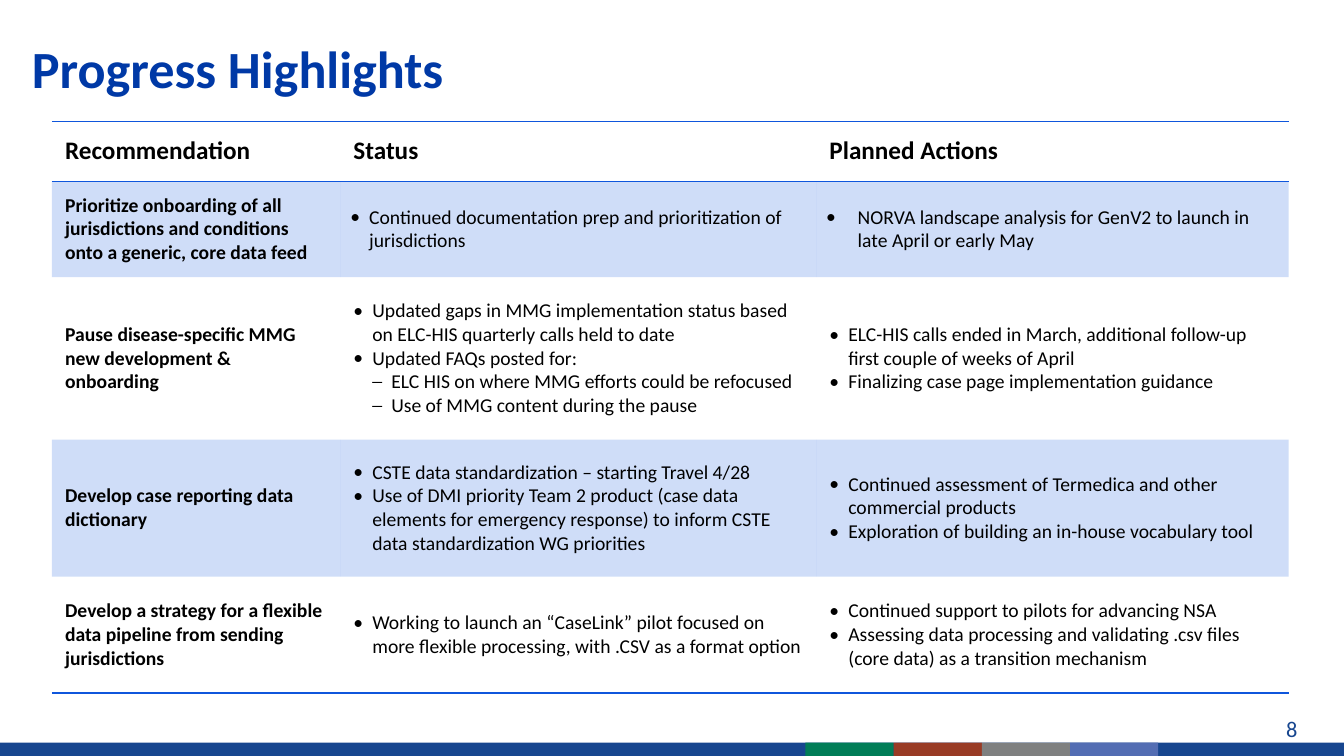
from lxml.etree import SubElement
from pptx import Presentation
from pptx.dml.color import RGBColor
from pptx.enum.shapes import MSO_SHAPE
from pptx.enum.text import MSO_ANCHOR, MSO_AUTO_SIZE, PP_ALIGN
from pptx.oxml.ns import qn
from pptx.util import Pt

TITLE_BLUE = RGBColor(0x00, 0x39, 0xA6)
TABLE_BLUE = RGBColor(0x0F, 0x56, 0xDC)
NAVY = RGBColor(0x17, 0x46, 0x8F)
GREEN = RGBColor(0x00, 0x7D, 0x57)
RED = RGBColor(0x99, 0x3B, 0x25)
GRAY = RGBColor(0x7F, 0x80, 0x80)
PERIWINKLE = RGBColor(0x53, 0x6D, 0xB3)
BLACK = RGBColor(0, 0, 0)

NO_STYLE = "{2D5ABB26-0587-4C30-8999-92F81FD0307C}"
COLUMN_WIDTHS = [206, 340, 337.5]
ROW_HEIGHTS = [43, 68.5, 116, 98, 83]
BULLET, DASH = "•", "─"
INDENT = 13.5

ROWS = [
    [[("", "Recommendation")], [("", "Status")], [("", "Planned Actions")]],
    [
        [("", "Prioritize onboarding of all jurisdictions and conditions onto a generic, core data feed")],
        [(BULLET, "Continued documentation prep and prioritization of jurisdictions")],
        [(BULLET, "NORVA landscape analysis for GenV2 to launch in late April or early May")],
    ],
    [
        [("", "Pause disease-specific MMG new development & onboarding")],
        [
            (BULLET, "Updated gaps in MMG implementation status based on ELC-HIS quarterly calls held to date"),
            (BULLET, "Updated FAQs posted for:"),
            (DASH, "ELC HIS on where MMG efforts could be refocused"),
            (DASH, "Use of MMG content during the pause"),
        ],
        [
            (BULLET, "ELC-HIS calls ended in March, additional follow-up first couple of weeks of April"),
            (BULLET, "Finalizing case page implementation guidance"),
        ],
    ],
    [
        [("", "Develop case reporting data dictionary")],
        [
            (BULLET, "CSTE data standardization – starting Travel 4/28"),
            (BULLET, "Use of DMI priority Team 2 product (case data elements for emergency response) "
                     "to inform CSTE data standardization WG priorities"),
        ],
        [
            (BULLET, "Continued assessment of Termedica and other commercial products"),
            (BULLET, "Exploration of building an in-house vocabulary tool"),
        ],
    ],
    [
        [("", "Develop a strategy for a flexible data pipeline from sending jurisdictions")],
        [(BULLET, "Working to launch an “CaseLink” pilot focused on more flexible processing, "
                  "with .CSV as a format option")],
        [
            (BULLET, "Continued support to pilots for advancing NSA"),
            (BULLET, "Assessing data processing and validating .csv files (core data) as a transition mechanism"),
        ],
    ],
]


def apply_format(target, values):
    for name, value in values.items():
        setattr(target, name, value)


def add_span(para, text, size, color, bold):
    span = para.add_run()
    span.text = text
    apply_format(span.font, {"name": "Calibri", "size": Pt(size), "bold": bold})
    span.font.color.rgb = color


deck = Presentation()
apply_format(deck, {"slide_width": Pt(960), "slide_height": Pt(540)})
page = deck.slides.add_slide(deck.slide_layouts[5])

footer_bars = [(0, 960, NAVY)]
for index, color in enumerate([GREEN, RED, GRAY, PERIWINKLE]):
    footer_bars.append((575.3 + 63 * index, 63, color))
for left, width, color in footer_bars:
    bar = page.shapes.add_shape(MSO_SHAPE.RECTANGLE, Pt(left), Pt(530.5), Pt(width), Pt(9.5))
    bar.shadow.inherit = False
    bar.fill.solid()
    bar.fill.fore_color.rgb = color
    bar.line.fill.background()

title = page.shapes.title
apply_format(title, {"left": Pt(15.5), "top": Pt(21.5), "width": Pt(896), "height": Pt(52.5)})
apply_format(title.text_frame, {
    "vertical_anchor": MSO_ANCHOR.BOTTOM, "word_wrap": True, "auto_size": MSO_AUTO_SIZE.NONE,
})
title_para = title.text_frame.paragraphs[0]
apply_format(title_para, {"alignment": PP_ALIGN.LEFT, "line_spacing": Pt(40)})
add_span(title_para, "Progress Highlights", 37.3, TITLE_BLUE, True)

frame = page.shapes.add_table(
    len(ROWS), len(COLUMN_WIDTHS), Pt(37), Pt(86.5), Pt(sum(COLUMN_WIDTHS)), Pt(sum(ROW_HEIGHTS)))
table = frame.table
apply_format(table, {"first_row": False, "horz_banding": False})
table._tbl.tblPr.find(qn("a:tableStyleId")).text = NO_STYLE
for column, width in zip(table.columns, COLUMN_WIDTHS):
    column.width = Pt(width)
for row, height in zip(table.rows, ROW_HEIGHTS):
    row.height = Pt(height)

for row_index, row in enumerate(ROWS):
    borders = {0: ["a:lnT", "a:lnB"], len(ROWS) - 1: ["a:lnB"]}.get(row_index, [])
    for column_index, lines in enumerate(row):
        cell = table.cell(row_index, column_index)
        tight = row_index == 1 and column_index > 0
        side, edge = (7.2, 0) if tight else (9.5, 4.8)
        apply_format(cell, {
            "margin_left": Pt(side), "margin_right": Pt(side),
            "margin_top": Pt(edge), "margin_bottom": Pt(edge),
            "vertical_anchor": MSO_ANCHOR.MIDDLE,
        })
        properties = cell._tc.get_or_add_tcPr()
        for side_tag in borders:
            border = SubElement(properties, qn(side_tag), w=str(Pt(1)))
            paint = SubElement(border, qn("a:solidFill"))
            SubElement(paint, qn("a:srgbClr"), val=str(TABLE_BLUE))
        if row_index % 2:
            cell.fill.solid()
            cell.fill.fore_color.rgb = TABLE_BLUE
            SubElement(next(properties.iter(qn("a:srgbClr"))), qn("a:alpha"), val="20000")
        else:
            cell.fill.background()

        for line_index, (marker, text) in enumerate(lines):
            text_frame = cell.text_frame
            para = text_frame.add_paragraph() if line_index else text_frame.paragraphs[0]
            if marker:
                hanging = 22.5 if tight and column_index == 2 else INDENT
                para.level = int(marker == DASH)
                bullet = para._p.get_or_add_pPr()
                bullet.set("marL", str(Pt(hanging * (para.level + 1))))
                bullet.set("indent", str(-Pt(hanging)))
                SubElement(bullet, qn("a:buFont"), typeface="Calibri")
                SubElement(bullet, qn("a:buChar"), char=marker)
            add_span(para, text, 14 if row_index else 18, BLACK, not marker)

number_box = page.shapes.add_textbox(Pt(911.5), Pt(507.5), Pt(48), Pt(24))
number_box.text_frame.word_wrap = True
add_span(number_box.text_frame.paragraphs[0], "8", 16, NAVY, False)

deck.save("out.pptx")
